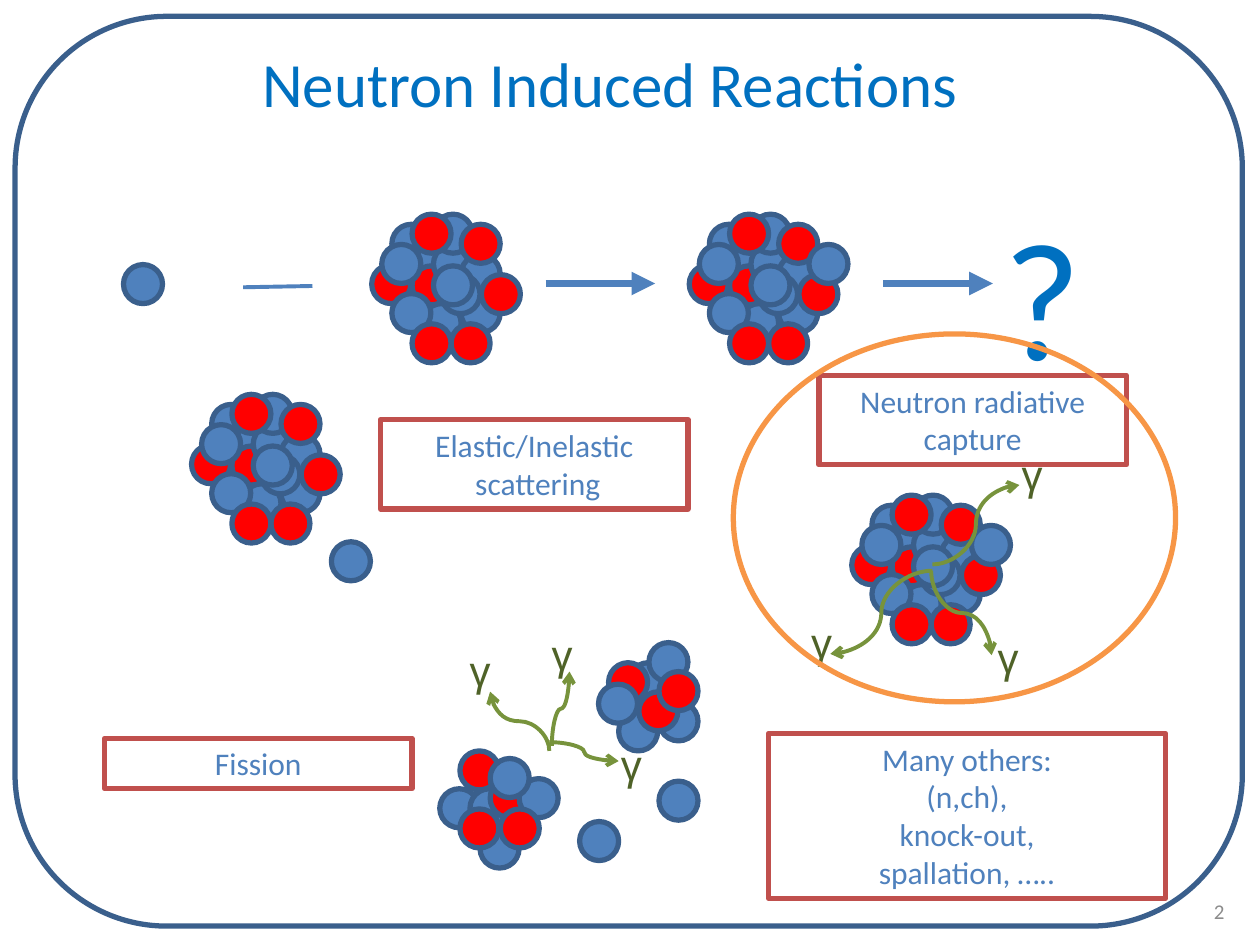
from lxml.etree import SubElement
from pptx import Presentation
from pptx.dml.color import RGBColor
from pptx.enum.shapes import MSO_CONNECTOR, MSO_SHAPE
from pptx.enum.text import MSO_ANCHOR, PP_ALIGN
from pptx.oxml.ns import qn
from pptx.util import Inches, Pt

COLORS = {
    "neutron": "4F81BD", "proton": "FF0000", "outline": "3A5F8C",
    "title": "0070C0", "label_border": "C0504D", "white": "FFFFFF",
    "gamma_ray": "77933C", "gamma": "4F6228", "highlight": "F79646",
    "number": "8C8C8C",
}
NUCLEON_SIZE = 0.31

# Nucleons from back to front: kind, then offset from the nucleus corner
NUCLEUS = [
    ("neutron", 0.16, 0.08), ("neutron", 0.33, 0.25), ("proton", 0.32, 0.41),
    ("neutron", 0.49, 0.24), ("neutron", 0.49, 0), ("neutron", 0.71, 0.63),
    ("neutron", 0.71, 0.32), ("proton", 0.71, 0.08), ("neutron", 0.4, 0.71),
    ("proton", 0, 0.4), ("neutron", 0.16, 0.63), ("neutron", 0.55, 0.48),
    ("proton", 0.63, 0.87), ("proton", 0.87, 0.48), ("neutron", 0.08, 0.24),
    ("proton", 0.32, 0.87), ("proton", 0.32, 0), ("neutron", 0.49, 0.41),
]
COMPOUND_NUCLEUS = NUCLEUS + [("neutron", 0.95, 0.24)]
LOWER_FRAGMENT = [
    ("neutron", 0.32, 0.62), ("proton", 0.16, 0), ("neutron", 0, 0.3),
    ("neutron", 0.24, 0.3), ("proton", 0.4, 0.22), ("neutron", 0.63, 0.22),
    ("neutron", 0.4, 0.06), ("proton", 0.48, 0.46), ("proton", 0.16, 0.46),
]
UPPER_FRAGMENT = [
    ("neutron", 0.48, 0.47), ("neutron", 0.16, 0.55), ("neutron", 0.24, 0.16),
    ("proton", 0.08, 0.16), ("proton", 0.32, 0.39), ("neutron", 0.4, 0),
    ("proton", 0.48, 0.23), ("neutron", 0, 0.33),
]
FREE_NEUTRON = [("neutron", 0, 0)]

COLLISION = [(FREE_NEUTRON, 0.98, 2.1), (NUCLEUS, 2.95, 1.7),
             (COMPOUND_NUCLEUS, 5.47, 1.7)]
CAPTURE = [(COMPOUND_NUCLEUS, 6.76, 3.93)]
SCATTERING = [(NUCLEUS, 1.52, 3.13), (FREE_NEUTRON, 2.63, 4.3)]
FISSION = [(FREE_NEUTRON, 5.23, 6.2), (LOWER_FRAGMENT, 3.49, 5.96),
           (UPPER_FRAGMENT, 4.75, 5.1), (FREE_NEUTRON, 4.6, 6.52)]

# Ray start, ray end, whether it leaves vertically, corner of its label
CAPTURE_GAMMAS = [
    ((7.4, 4.48), (8.09, 3.85), False, (8.01, 3.51)),
    ((7.39, 4.53), (7.87, 5.2), True, (7.82, 4.96)),
    ((7.4, 4.53), (6.59, 5.19), False, (6.34, 4.84)),
]
FISSION_GAMMAS = [
    ((4.36, 5.96), (3.89, 5.49), True, (3.63, 5.07)),
    ((4.38, 5.92), (4.52, 5.33), True, (4.28, 4.94)),
    ((4.36, 5.89), (4.91, 6.04), False, (4.83, 5.81)),
]
UPPER_LABELS = [
    (["Elastic/Inelastic", " scattering"], (3.02, 3.33, 2.44, 0.71)),
    (["Neutron radiative capture"], (6.5, 2.98, 2.44, 0.71)),
]
LOWER_LABELS = [
    (["Fission"], (0.83, 5.86, 2.44, 0.4)),
    (["Many others:", "(n,ch),", "knock-out,", "spallation, ….."],
     (6.1, 5.82, 3.15, 1.31)),
]

deck = Presentation()
deck.slide_width, deck.slide_height = Inches(10), Inches(7.5)
page = deck.slides.add_slide(deck.slide_layouts[6])


def color(name):
    return RGBColor.from_string(COLORS[name])


def add_shape(kind, place, fill=None, line=None, parent=page):
    shape = parent.shapes.add_shape(kind, *map(Inches, place))
    shape.shadow.inherit = False
    if fill:
        shape.fill.solid()
        shape.fill.fore_color.rgb = color(fill)
    else:
        shape.fill.background()
    if line:
        shape.line.color.rgb = color(line)
        shape.line.width = Pt(3)
    else:
        shape.line.fill.background()
    return shape


def write(box, lines, size, ink, font="Calibri", align=PP_ALIGN.LEFT,
          anchor=MSO_ANCHOR.TOP, wrap=True):
    frame = box.text_frame
    frame.word_wrap = wrap
    frame.vertical_anchor = anchor
    for index, line in enumerate(lines):
        para = frame.add_paragraph() if index else frame.paragraphs[0]
        para.alignment = align
        span = para.add_run()
        span.text = line
        span.font.name = font
        span.font.size = Pt(size)
        span.font.color.rgb = color(ink)


def add_text(place, text, size, ink, **style):
    box = page.shapes.add_textbox(*map(Inches, place))
    write(box, [text], size, ink, **style)


def add_line(start, end, ink, width, head=None, kind=MSO_CONNECTOR.STRAIGHT):
    line = page.shapes.add_connector(kind, *map(Inches, start + end))
    line.line.color.rgb = color(ink)
    line.line.width = Pt(width)
    if head:
        SubElement(line.line._get_or_add_ln(), qn("a:tailEnd"), type=head)
    SubElement(line._element.spPr, qn("a:effectLst"))
    return line


def add_curve(start, end, vertical):
    """Draw an S-shaped ray; a vertical one is a level curve turned a quarter."""
    if vertical:
        (x1, y1), (x2, y2) = start, end
        middle_x, middle_y = (x1 + x2) / 2, (y1 + y2) / 2
        half_length, half_rise = abs(y2 - y1) / 2, abs(x2 - x1) / 2
        if (x2 > x1) != (y2 > y1):
            half_rise = -half_rise
        start = (middle_x - half_length, middle_y + half_rise)
        end = (middle_x + half_length, middle_y - half_rise)
    curve = add_line(start, end, "gamma_ray", 2.25, "arrow", MSO_CONNECTOR.CURVE)
    if vertical:
        quarter_turns = 1 if y2 > y1 else 3
        xfrm = curve._element.spPr.find(qn("a:xfrm"))
        xfrm.set("rot", str(quarter_turns * 90 * 60000))


def add_particles(particles):
    for nucleons, left, top in particles:
        parent = page.shapes.add_group_shape() if len(nucleons) > 1 else page
        for kind, dx, dy in nucleons:
            add_shape(MSO_SHAPE.OVAL,
                      (left + dx, top + dy, NUCLEON_SIZE, NUCLEON_SIZE),
                      kind, "outline", parent)


def add_gammas(gammas):
    for start, end, vertical, corner in gammas:
        add_curve(start, end, vertical)
        add_text(corner + (0.34, 0.5), "γ", 24, "gamma", font="Arial", wrap=False)


def add_labels(labels):
    for lines, place in labels:
        box = add_shape(MSO_SHAPE.RECTANGLE, place, "white", "label_border")
        write(box, lines, 18, "neutron", align=PP_ALIGN.CENTER)


add_shape(MSO_SHAPE.ROUNDED_RECTANGLE, (0.12, 0.13, 9.74, 7.22), line="outline")
add_text((1.69, 0.3, 6.3, 1.25), "Neutron Induced Reactions", 36, "title",
         align=PP_ALIGN.CENTER)
number = add_shape(MSO_SHAPE.OVAL, (9.49, 7.06, 0.35, 0.35))
number.text_frame.margin_left = number.text_frame.margin_right = Inches(0.07)
number.text_frame.margin_top = number.text_frame.margin_bottom = 0
write(number, ["2"], 12, "number", align=PP_ALIGN.RIGHT,
      anchor=MSO_ANCHOR.MIDDLE, wrap=False)

add_particles(COLLISION)
add_line((1.93, 2.28), (2.48, 2.27), "neutron", 2.25)
add_text((7.87, 1.48, 0.83, 1.72), "?", 96, "title", wrap=False)
for arrow_left in (4.33, 7.01):
    add_line((arrow_left, 2.25), (arrow_left + 0.87, 2.25), "neutron", 4.5,
             "triangle")

add_particles(CAPTURE)
add_gammas(CAPTURE_GAMMAS)
add_particles(SCATTERING)
add_labels(UPPER_LABELS)
add_particles(FISSION)
add_gammas(FISSION_GAMMAS)
add_labels(LOWER_LABELS)
add_shape(MSO_SHAPE.OVAL, (5.82, 2.65, 3.51, 2.92), line="highlight")

deck.save("out.pptx")
